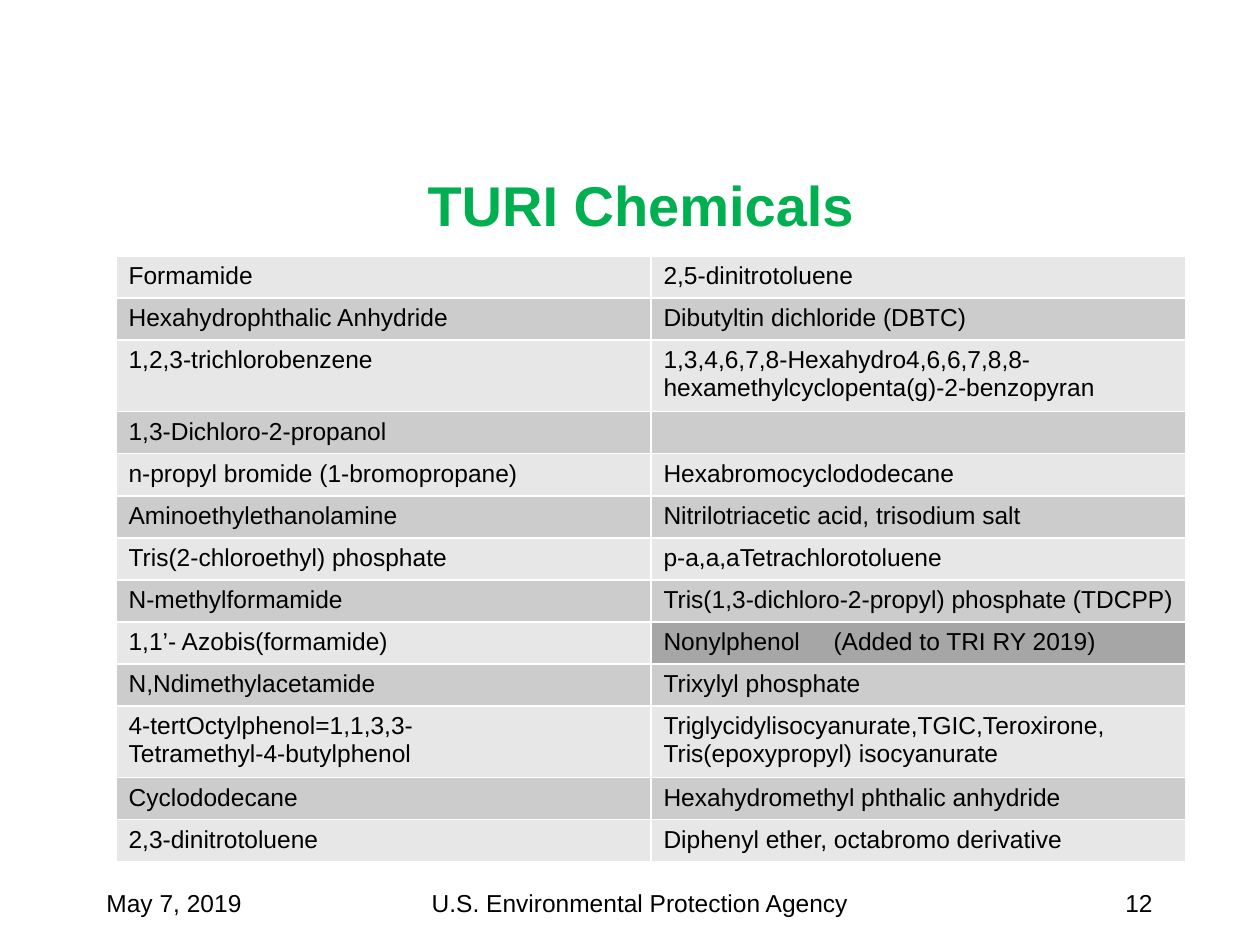
from lxml.etree import SubElement
from pptx import Presentation
from pptx.dml.color import RGBColor
from pptx.enum.text import MSO_ANCHOR, PP_ALIGN
from pptx.oxml.ns import qn
from pptx.util import Pt

PX = 914400 // 126
GREEN = RGBColor(0x00, 0xB0, 0x50)
BLACK = RGBColor(0, 0, 0)
BANDS = (RGBColor(0xE7, 0xE7, 0xE7), RGBColor(0xCC, 0xCC, 0xCC))
HIGHLIGHT = RGBColor(0xA6, 0xA6, 0xA6)

TITLE = "TURI Chemicals"
CHEMICALS = [
    ("Formamide", "2,5-dinitrotoluene"),
    ("Hexahydrophthalic Anhydride", "Dibutyltin dichloride (DBTC)"),
    ("1,2,3-trichlorobenzene",
     "1,3,4,6,7,8-Hexahydro4,6,6,7,8,8-\nhexamethylcyclopenta(g)-2-benzopyran"),
    ("1,3-Dichloro-2-propanol", ""),
    ("n-propyl bromide (1-bromopropane)", "Hexabromocyclododecane"),
    ("Aminoethylethanolamine", "Nitrilotriacetic acid, trisodium salt"),
    ("Tris(2-chloroethyl) phosphate", "p-a,a,aTetrachlorotoluene"),
    ("N-methylformamide", "Tris(1,3-dichloro-2-propyl) phosphate (TDCPP)"),
    ("1,1’- Azobis(formamide)", "Nonylphenol\t(Added to TRI RY 2019)"),
    ("N,Ndimethylacetamide", "Trixylyl phosphate"),
    ("4-tertOctylphenol=1,1,3,3-\nTetramethyl-4-butylphenol",
     "Triglycidylisocyanurate,TGIC,Teroxirone,\nTris(epoxypropyl) isocyanurate"),
    ("Cyclododecane", "Hexahydromethyl phthalic anhydride"),
    ("2,3-dinitrotoluene", "Diphenyl ether, octabromo derivative"),
]
FOOTERS = [  # text, left, width, alignment
    ("May 7, 2019", 94, 262, PP_ALIGN.LEFT),
    ("U.S. Environmental Protection Agency", 262, 756, PP_ALIGN.CENTER),
    ("12", 903, 262, PP_ALIGN.RIGHT),
]
FOOTER_TOP, FOOTER_HEIGHT = 861, 63
TABLE_LEFT, TABLE_TOP, COLUMN_WIDTH = 116, 256, 535
ROW_HEIGHT, EXTRA_LINE = 40, 28
TAB_STOP = 170


def px(*lengths):
    return [length * PX for length in lengths]


def format_runs(p, size, color, bold=False):
    for r in p.runs:
        r.font.name, r.font.size, r.font.bold = "Arial", Pt(size), bold
        r.font.color.rgb = color


def add_title(s):
    title = s.shapes.title
    title.left, title.top, title.width, title.height = px(116, 192, 1050, 87)
    tf = title.text_frame
    tf.text = TITLE
    tf.word_wrap = True
    tf.vertical_anchor = MSO_ANCHOR.MIDDLE
    tf.margin_bottom = 69 * PX
    p = tf.paragraphs[0]
    p.alignment = PP_ALIGN.CENTER
    format_runs(p, 32, GREEN, bold=True)


def fill_cell(cell, text, color):
    cell.fill.solid()
    cell.fill.fore_color.rgb = color
    cell.text_frame.text = text
    for p in cell.text_frame.paragraphs:
        if "\t" in text:
            tabs = SubElement(p._p.get_or_add_pPr(), qn("a:tabLst"))
            SubElement(tabs, qn("a:tab"), pos=str(TAB_STOP * PX), algn="l")
        if not text:
            SubElement(p._p, qn("a:endParaRPr"), sz="1400")
        format_runs(p, 14, BLACK)


def add_chemicals(s):
    heights = [ROW_HEIGHT + EXTRA_LINE * max(text.count("\n") for text in row)
               for row in CHEMICALS]
    frame = s.shapes.add_table(
        len(CHEMICALS), 2,
        *px(TABLE_LEFT, TABLE_TOP, 2 * COLUMN_WIDTH, sum(heights)))
    table = frame.table
    for i, (row, height) in enumerate(zip(CHEMICALS, heights)):
        table.rows[i].height = height * PX
        for j, text in enumerate(row):
            color = HIGHLIGHT if "Added to TRI" in text else BANDS[i % 2]
            fill_cell(table.cell(i, j), text, color)


def add_footers(s):
    for text, left, width, alignment in FOOTERS:
        box = s.shapes.add_textbox(*px(left, FOOTER_TOP, width, FOOTER_HEIGHT))
        tf = box.text_frame
        tf.word_wrap = True
        tf.vertical_anchor = MSO_ANCHOR.BOTTOM
        tf.text = text
        p = tf.paragraphs[0]
        p.alignment = alignment
        format_runs(p, 14, BLACK)


def main():
    prs = Presentation()
    prs.slide_width, prs.slide_height = px(1260, 945)
    s = prs.slides.add_slide(prs.slide_layouts[5])
    add_title(s)
    add_footers(s)
    add_chemicals(s)
    prs.save("out.pptx")


if __name__ == "__main__":
    main()
